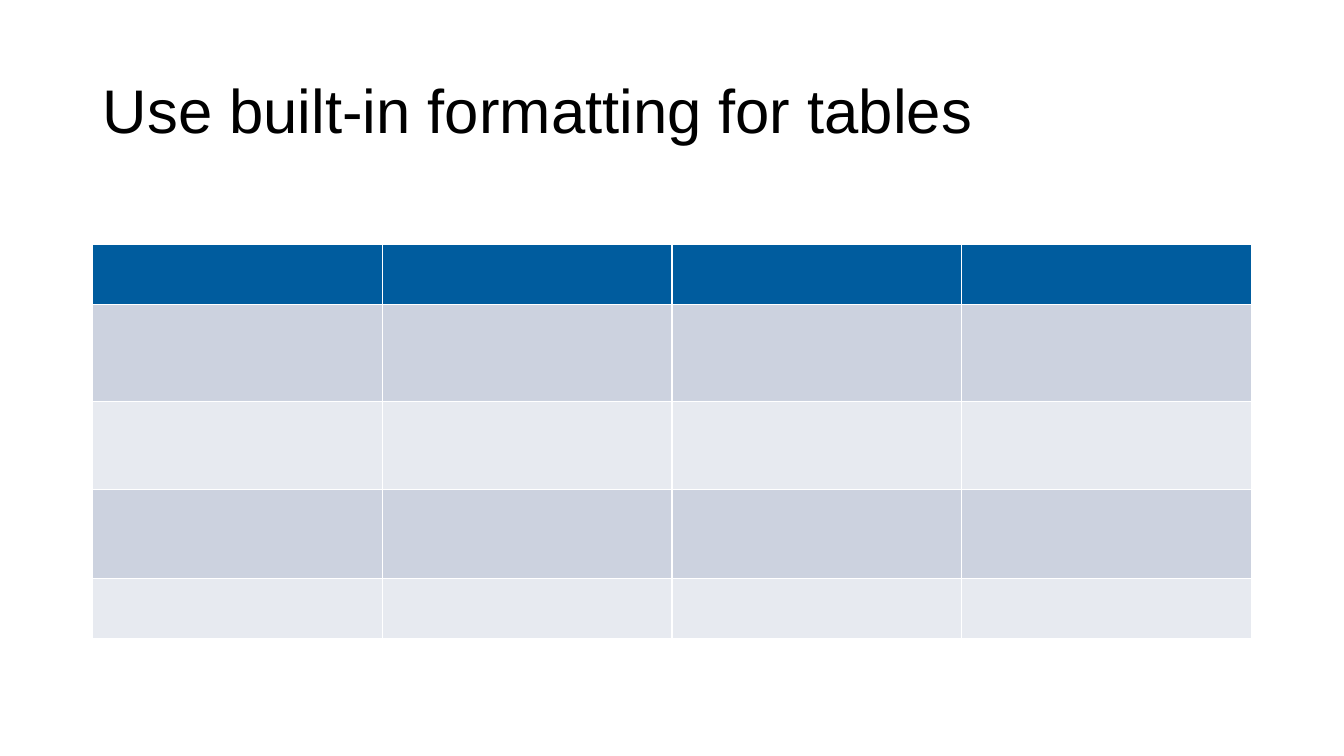
"""Build a slide with a title and an empty banded table."""
from dataclasses import dataclass

from pptx import Presentation
from pptx.dml.color import RGBColor
from pptx.enum.text import MSO_ANCHOR, MSO_AUTO_SIZE, PP_ALIGN
from pptx.util import Inches, Pt


@dataclass(frozen=True)
class Theme:
    font: str = "Arial"
    title_size: Pt = Pt(44)
    text: RGBColor = RGBColor.from_string("000000")
    header: RGBColor = RGBColor.from_string("005C9E")
    bands: tuple = (RGBColor.from_string("CCD2DF"), RGBColor.from_string("E7EAF0"))


theme = Theme()
presentation = Presentation()
presentation.slide_width = Inches(13.33)
presentation.slide_height = Inches(7.5)
margin = Inches(0.92)
content_width = presentation.slide_width - 2 * margin

slide = presentation.slides.add_slide(presentation.slide_layouts.get_by_name("Title Only"))

title = slide.shapes.title
title.left, title.top = margin, Inches(0.4)
title.width, title.height = content_width, Inches(1.45)
title_frame = title.text_frame
title_frame.text = "Use built-in formatting for tables"
title_frame.word_wrap = True
title_frame.auto_size = MSO_AUTO_SIZE.NONE
title_frame.vertical_anchor = MSO_ANCHOR.MIDDLE
paragraph = title_frame.paragraphs[0]
paragraph.alignment = PP_ALIGN.LEFT
paragraph.line_spacing = 0.9
paragraph.font.name = theme.font
paragraph.font.size = theme.title_size
paragraph.font.color.rgb = theme.text

row_heights = [Inches(height) for height in (0.6, 0.96, 0.88, 0.88, 0.6)]
column_count = 4
table = slide.shapes.add_table(
    len(row_heights), column_count, margin, Inches(2.42), content_width, sum(row_heights)
).table
for row_index, (row, height) in enumerate(zip(table.rows, row_heights)):
    row.height = height
    color = theme.bands[(row_index - 1) % 2] if row_index else theme.header
    for cell in row.cells:
        cell.fill.solid()
        cell.fill.fore_color.rgb = color

presentation.save("out.pptx")
